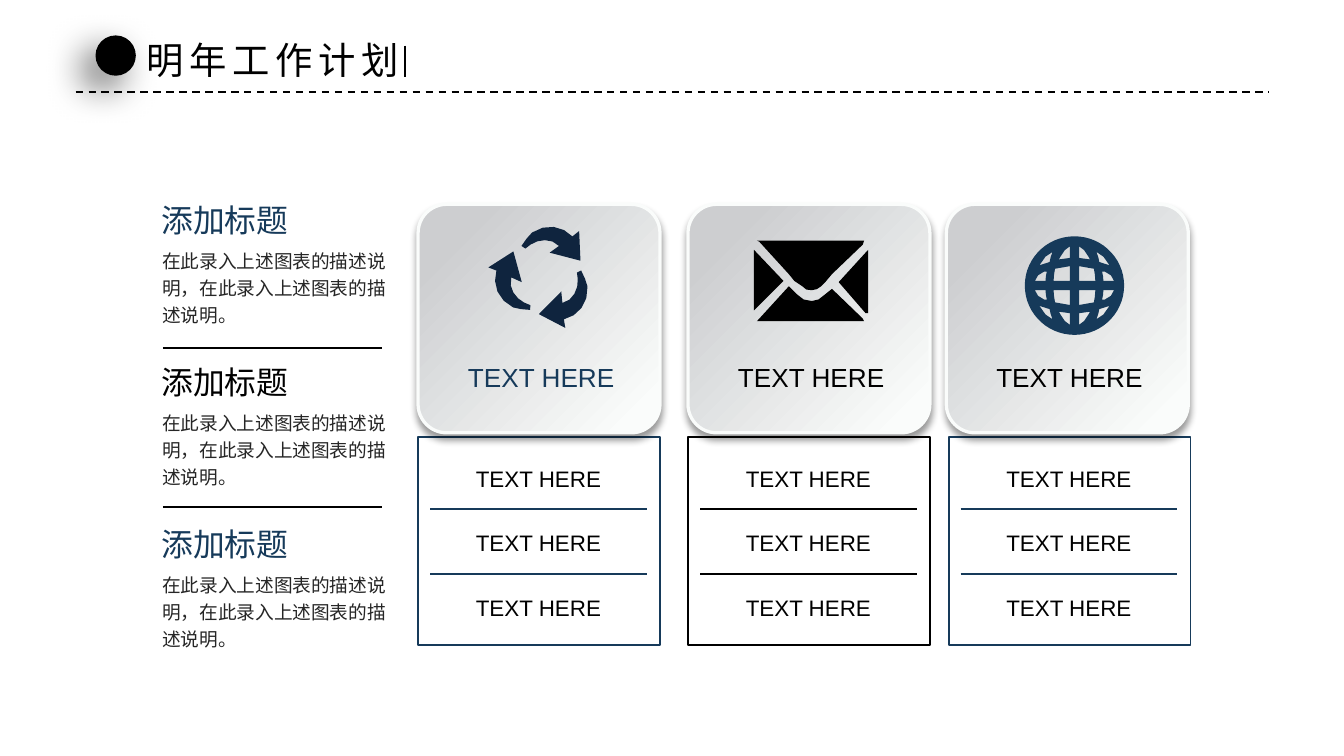
from math import cos, pi, sin

from lxml import etree
from pptx import Presentation
from pptx.dml.color import RGBColor
from pptx.enum.dml import MSO_LINE
from pptx.enum.shapes import MSO_CONNECTOR, MSO_SHAPE
from pptx.enum.text import MSO_ANCHOR, MSO_AUTO_SIZE, PP_ALIGN
from pptx.oxml.ns import qn
from pptx.util import Pt

LEFT, MID = PP_ALIGN.LEFT, PP_ALIGN.CENTER
TOP, GROW = MSO_ANCHOR.TOP, MSO_AUTO_SIZE.SHAPE_TO_FIT_TEXT
RECT, ROUND, OVAL = MSO_SHAPE.RECTANGLE, MSO_SHAPE.ROUNDED_RECTANGLE, MSO_SHAPE.OVAL
LINE, DASH = MSO_CONNECTOR.STRAIGHT, MSO_LINE.DASH
BLACK = RGBColor(0x00, 0x00, 0x00)
NAVY = RGBColor(0x16, 0x3A, 0x5A)
DARK = RGBColor(0x0F, 0x24, 0x3E)
TEXT = RGBColor(0x26, 0x26, 0x26)
GRAY = RGBColor(0xCD, 0xCE, 0xD0)
PALE = RGBColor(0xFA, 0xFC, 0xFB)
LATIN, HAN = "Arial", "Noto Sans CJK SC"

deck = Presentation()
deck.slide_width, deck.slide_height = Pt(720), Pt(405)
slide = deck.slides.add_slide(deck.slide_layouts[5])
shapes = slide.shapes


def write(box, words, size, face, hue, align=LEFT):
    frame = box.text_frame
    frame.word_wrap = True
    frame.auto_size = GROW
    frame.vertical_anchor = TOP
    para = frame.paragraphs[0]
    run = para.add_run()
    run.text = words
    para.alignment = align
    para.font.size = Pt(size)
    para.font.name = face
    para.font.color.rgb = hue
    mark = run._r.get_or_add_rPr()
    etree.SubElement(mark, qn("a:ea")).set("typeface", face)
    return frame


def rule(x, y, end, low, hue, width=1):
    line = shapes.add_connector(LINE, Pt(x), Pt(y), Pt(end), Pt(low))
    line.line.color.rgb = hue
    line.line.width = Pt(width)
    etree.SubElement(line._element.spPr, qn("a:effectLst"))
    return line


rule(40.5, 49.2, 679.5, 49.2, BLACK).line.dash_style = DASH
dot = shapes.add_shape(OVAL, Pt(51.2), Pt(19), Pt(21.6), Pt(21.6))
dot.fill.solid()
dot.fill.fore_color.rgb = BLACK
dot.line.fill.background()
shades = [(dot, 60, 20, 10, 135)]

title = shapes.title
title.left, title.top, title.width, title.height = Pt(71.3), Pt(16.5), Pt(154), Pt(31.5)
frame = write(title, "明年工作计划", 20, HAN, BLACK)
frame.word_wrap = False
frame.paragraphs[0].runs[0]._r.rPr.set("spc", "300")
rule(217, 24.5, 217, 41, BLACK, 1.5)

note = "在此录入上述图表的描述说明，在此录入上述图表的描述说明。"
for row, hue in enumerate((NAVY, BLACK, NAVY)):
    top = 104.5 + 86.8 * row
    head = shapes.add_textbox(Pt(81.5), Pt(top), Pt(87), Pt(26))
    body = shapes.add_textbox(Pt(82), Pt(top + 24.2), Pt(134), Pt(49))
    for frame in (write(head, "添加标题", 17, HAN, hue),
                  write(body, note, 10, HAN, TEXT)):
        frame.margin_left = frame.margin_right = Pt(5)
        frame.margin_top = frame.margin_bottom = Pt(3)
    body.text_frame.paragraphs[0].line_spacing = 1.2
    if row < 2:
        rule(87.3, 186.5 + 85 * row, 204.5, 186.5 + 85 * row, BLACK)

for x, left, edge, hue in ((224, 224, NAVY, NAVY),
                           (368.6, 368.6, BLACK, BLACK),
                           (508.2, 507, NAVY, BLACK)):
    frame = shapes.add_shape(RECT, Pt(x), Pt(234), Pt(129.6), Pt(111.6))
    frame.shadow.inherit = False
    frame.fill.background()
    frame.line.color.rgb = edge
    frame.line.width = Pt(1)
    for row in range(3):
        top = 245.5 + 34.5 * row
        item = shapes.add_textbox(Pt(x + 6.5), Pt(top), Pt(116), Pt(21.8))
        write(item, "TEXT HERE", 12, LATIN, BLACK, MID)
        if row < 2:
            rule(x + 6.5, top + 27.4, x + 122.5, top + 27.4, edge)

    card = shapes.add_shape(ROUND, Pt(left), Pt(109.5), Pt(129.6), Pt(122.4))
    card.adjustments[0] = 0.125
    card.fill.gradient()
    card.fill.gradient_angle = 315
    for stop, tint, spot in zip(card.fill.gradient_stops, (GRAY, PALE), (0.15, 0.92)):
        stop.color.rgb = tint
        stop.position = spot
    card.line.color.rgb = PALE
    card.line.width = Pt(1.75)
    shades.append((card, 40, 4, 3, 90))
    label = shapes.add_textbox(Pt(left + 8), Pt(190), Pt(116), Pt(24.2))
    write(label, "TEXT HERE", 14, LATIN, hue, MID)

for shape, alpha, blur, dist, turn in shades:
    shape.shadow.inherit = False
    glow = etree.SubElement(
        shape._element.spPr.find(qn("a:effectLst")), qn("a:outerShdw"),
        blurRad=str(Pt(blur)), dist=str(Pt(dist)), dir=str(turn * 60000),
        algn="ctr", rotWithShape="0")
    tone = etree.SubElement(glow, qn("a:srgbClr"), val=str(BLACK))
    etree.SubElement(tone, qn("a:alpha"), val=str(alpha * 1000))

arrow = [(18.7, -23.8), (15.1, -20.9), (10.6, -24.3), (5.1, -26), (-0.8, -25.6),
         (-6.5, -23), (-9.4, -19.8), (-12.2, -15.8), (-10.1, -14.4), (-7.2, -16.6),
         (-3.6, -18.3), (0.4, -18.9), (4.4, -18.2), (7.9, -15.8), (2.9, -12.2),
         (19.4, -7.9)]
cycle = [[(x * cos(a) - y * sin(a), x * sin(a) + y * cos(a)) for x, y in arrow]
         for a in (0, 2 * pi / 3, 4 * pi / 3)]

mail = [
    [(-30.6, -16.6), (-30.6, 15.8), (-14.8, 0)],
    [(-29, -21.6), (-27.7, -20.9), (-11.9, -3.6), (-9, 0), (-4.7, 2.9), (-2.5, 4.7),
     (0.4, 5), (3, 4.5), (5.4, 2.9), (7.6, 0.7), (11.2, -3.6), (27.7, -19.4),
     (28.4, -21.6)],
    [(11.2, 4.3), (7.6, 7.2), (4, 10), (0.4, 10.8), (-4, 10), (-7.6, 7.2),
     (-11.9, 2.9), (-27.7, 20.2), (-29, 21.6), (28.4, 21.6), (27.7, 20.2)],
    [(29.2, -15.1), (14.8, 0.7), (29.2, 17.3), (30.6, 17.3), (30.6, -16.6)],
]

holes = [
    [(2.5, -21), (2.5, -14.8), (8.3, -14), (7.5, -15.5), (5.2, -19)],
    [(2.5, -10.4), (2.5, -2.5), (11.2, -2.5), (10.9, -6), (10.4, -9)],
    [(15.5, -2.5), (21.2, -2.5), (19.5, -5.5), (16.2, -7.5), (14.8, -7.5), (15.3, -5)],
    [(13.3, -12.6), (18.4, -11), (19.1, -10.4), (15.5, -15.5), (11.2, -18.4),
     (11.8, -18), (12.8, -15)],
]
globe = [[(26.6 * cos(pi * n / 30), 26.4 * sin(pi * n / 30)) for n in range(60)]]
globe += [[(x * across, y * down) for x, y in hole]
          for across in (1, -1) for down in (1, -1) for hole in holes]

for rings, x, y, hue in ((cycle, 291.6, 147.6, DARK),
                         (mail, 434.5, 150.5, BLACK),
                         (globe, 575.6, 153, NAVY)):
    pen = None
    for ring in rings:
        first, *rest = [(Pt(x + dx), Pt(y + dy)) for dx, dy in ring]
        if pen:
            pen.move_to(*first)
        else:
            pen = shapes.build_freeform(*first)
        pen.add_line_segments(rest)
    icon = pen.convert_to_shape()
    icon.shadow.inherit = False
    icon.fill.solid()
    icon.fill.fore_color.rgb = hue
    icon.line.fill.background()

deck.save("out.pptx")
